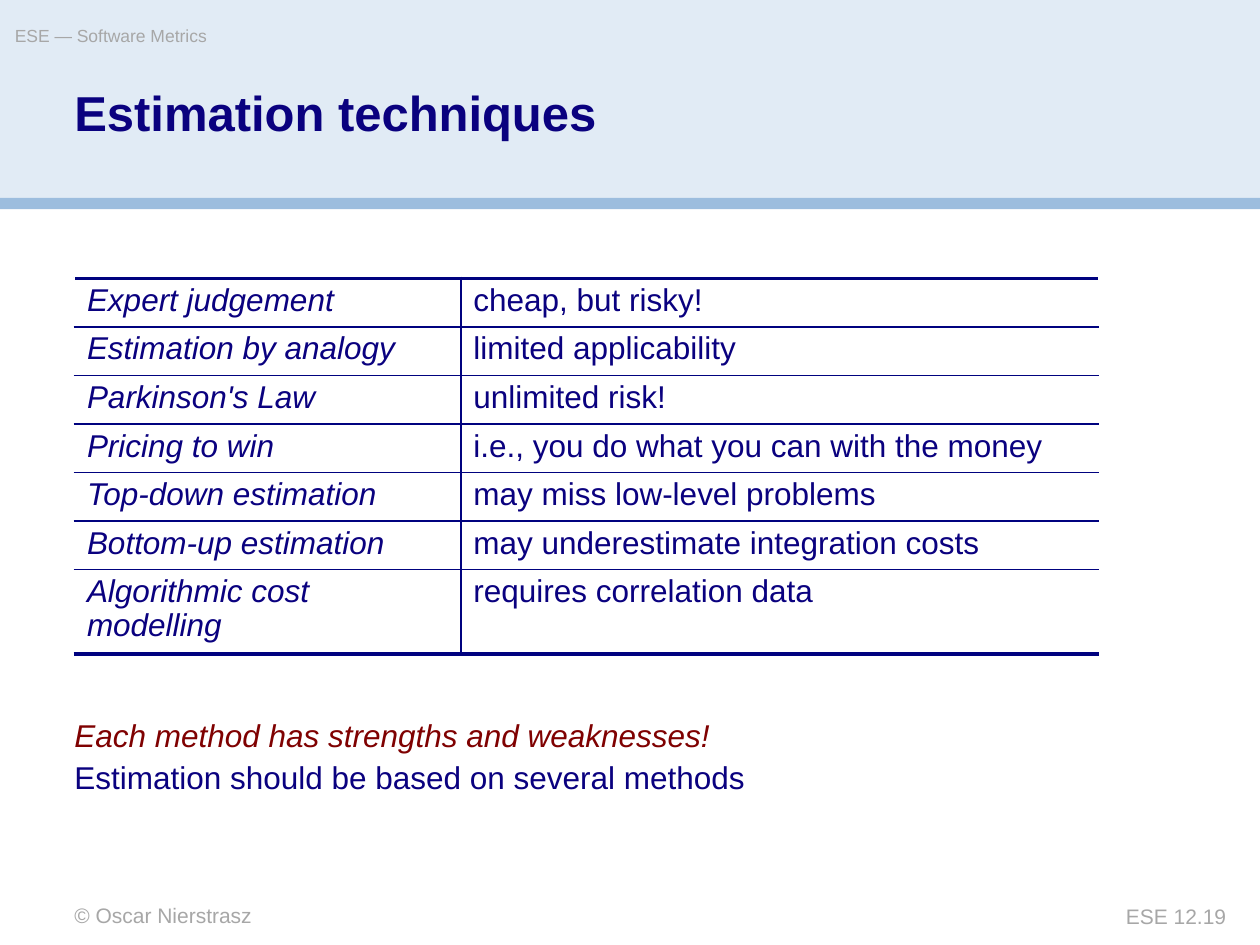
from dataclasses import dataclass

import pptx
import pptx.dml.color
import pptx.enum.shapes
import pptx.enum.text
import pptx.oxml
import pptx.oxml.ns
import pptx.util

Cm = pptx.util.Cm
Pt = pptx.util.Pt
RGBColor = pptx.dml.color.RGBColor
Align = pptx.enum.text.PP_ALIGN
Anchor = pptx.enum.text.MSO_ANCHOR

NAVY = RGBColor(0x0A, 0x01, 0x7F)
RULE = RGBColor(0x00, 0x02, 0x7F)
MAROON = RGBColor(0x7F, 0x01, 0x01)
GREY = RGBColor(0xA7, 0xA7, 0xA7)
PALE_BLUE = RGBColor(0xE1, 0xEB, 0xF5)
MID_BLUE = RGBColor(0x9C, 0xBD, 0xDE)

FONT = "Arial"
LEFT = 1.5
THIN, THICK = 1, 2.25
COLUMN_WIDTHS = (7.79, 12.85)
ROW_HEIGHT, LAST_ROW_HEIGHT = 0.92, 1.59


@dataclass(frozen=True)
class Band:
    top: float
    height: float
    color: RGBColor


@dataclass(frozen=True)
class Line:
    text: str
    size: float
    color: RGBColor
    bold: bool = False
    italic: bool = False
    align: Align = Align.LEFT
    spacing: float = 1.0
    before: float = 0


@dataclass(frozen=True)
class Box:
    left: float
    top: float
    width: float
    height: float
    lines: tuple[Line, ...]
    anchor: Anchor = Anchor.TOP
    wrap: bool = True


@dataclass(frozen=True)
class Technique:
    name: str
    remark: str


BANDS = (Band(0, 4.01, PALE_BLUE), Band(3.99, 0.23, MID_BLUE))

BOXES = (
    Box(LEFT, 18.19, 10.59, 0.51, (Line("© Oscar Nierstrasz", 12, GREY),)),
    Box(0.3, 0.51, 14.99, 0.71, (Line("ESE — Software Metrics", 10, GREY),), wrap=False),
    Box(20.96, 18.21, 3.76, 0.51, (Line("ESE 12.19", 12, GREY, align=Align.RIGHT),)),
    Box(LEFT, 1.8, 18.39, 2.26,
        (Line("Estimation techniques", 28, NAVY, bold=True, spacing=0.9),)),
    Box(LEFT, 14.07, 19.1, 2.41,
        (Line("Each method has strengths and weaknesses!", 18, MAROON,
              italic=True, spacing=0.95, before=4),
         Line("Estimation should be based on several methods", 18, NAVY,
              spacing=0.95, before=4)),
        anchor=Anchor.MIDDLE),
)

TECHNIQUES = (
    Technique("Expert judgement", "cheap, but risky!"),
    Technique("Estimation by analogy", "limited applicability"),
    Technique("Parkinson's Law", "unlimited risk!"),
    Technique("Pricing to win", "i.e., you do what you can with the money"),
    Technique("Top-down estimation", "may miss low-level problems"),
    Technique("Bottom-up estimation", "may underestimate integration costs"),
    Technique("Algorithmic cost modelling", "requires correlation data"),
)


def write_line(p, line: Line) -> None:
    p.add_run().text = line.text
    p.alignment = line.align
    p.line_spacing = line.spacing
    p.space_before = Pt(line.before)
    p.font.name = FONT
    p.font.size = Pt(line.size)
    p.font.bold = line.bold
    p.font.italic = line.italic
    p.font.color.rgb = line.color


def add_band(s, band: Band, width: int) -> None:
    sp = s.shapes.add_shape(pptx.enum.shapes.MSO_SHAPE.RECTANGLE,
                            0, Cm(band.top), width, Cm(band.height))
    sp.shadow.inherit = False
    sp.fill.solid()
    sp.fill.fore_color.rgb = band.color
    sp.line.fill.background()


def add_box(s, box: Box) -> None:
    sp = s.shapes.add_textbox(Cm(box.left), Cm(box.top), Cm(box.width), Cm(box.height))
    tf = sp.text_frame
    tf.word_wrap = box.wrap
    tf.vertical_anchor = box.anchor
    tf.margin_left = tf.margin_right = tf.margin_top = tf.margin_bottom = 0
    for i, line in enumerate(box.lines):
        write_line(tf.add_paragraph() if i else tf.paragraphs[0], line)


def add_border(cell, side: str, points: float) -> None:
    cell._tc.get_or_add_tcPr().append(pptx.oxml.parse_xml(
        f'<a:ln{side} {pptx.oxml.ns.nsdecls("a")} w="{int(Pt(points))}">'
        f'<a:solidFill><a:srgbClr val="{RULE}"/></a:solidFill></a:ln{side}>'))


def add_techniques(s, techniques: tuple[Technique, ...]) -> None:
    last = len(techniques) - 1
    height = last * ROW_HEIGHT + LAST_ROW_HEIGHT
    table = s.shapes.add_table(len(techniques), 2, Cm(LEFT), Cm(5.61),
                               Cm(sum(COLUMN_WIDTHS)), Cm(height)).table
    table.first_row = table.horz_banding = False
    for column, width in zip(table.columns, COLUMN_WIDTHS):
        column.width = Cm(width)
    for i, technique in enumerate(techniques):
        table.rows[i].height = Cm(LAST_ROW_HEIGHT if i == last else ROW_HEIGHT)
        for j, text in enumerate((technique.name, technique.remark)):
            cell = table.cell(i, j)
            write_line(cell.text_frame.paragraphs[0],
                       Line(text, 18, NAVY, italic=j == 0, spacing=0.95))
            add_border(cell, "L" if j else "R", THIN)
            add_border(cell, "T", THIN if i else THICK)
            add_border(cell, "B", THICK if i == last else THIN)
            cell.fill.background()


def main() -> None:
    """Build the estimation techniques slide."""
    prs = pptx.Presentation()
    prs.slide_width, prs.slide_height = Cm(25.4), Cm(19.05)
    s = prs.slides.add_slide(prs.slide_layouts[6])
    for band in BANDS:
        add_band(s, band, prs.slide_width)
    for box in BOXES:
        add_box(s, box)
    add_techniques(s, TECHNIQUES)
    prs.save("out.pptx")


if __name__ == "__main__":
    main()
